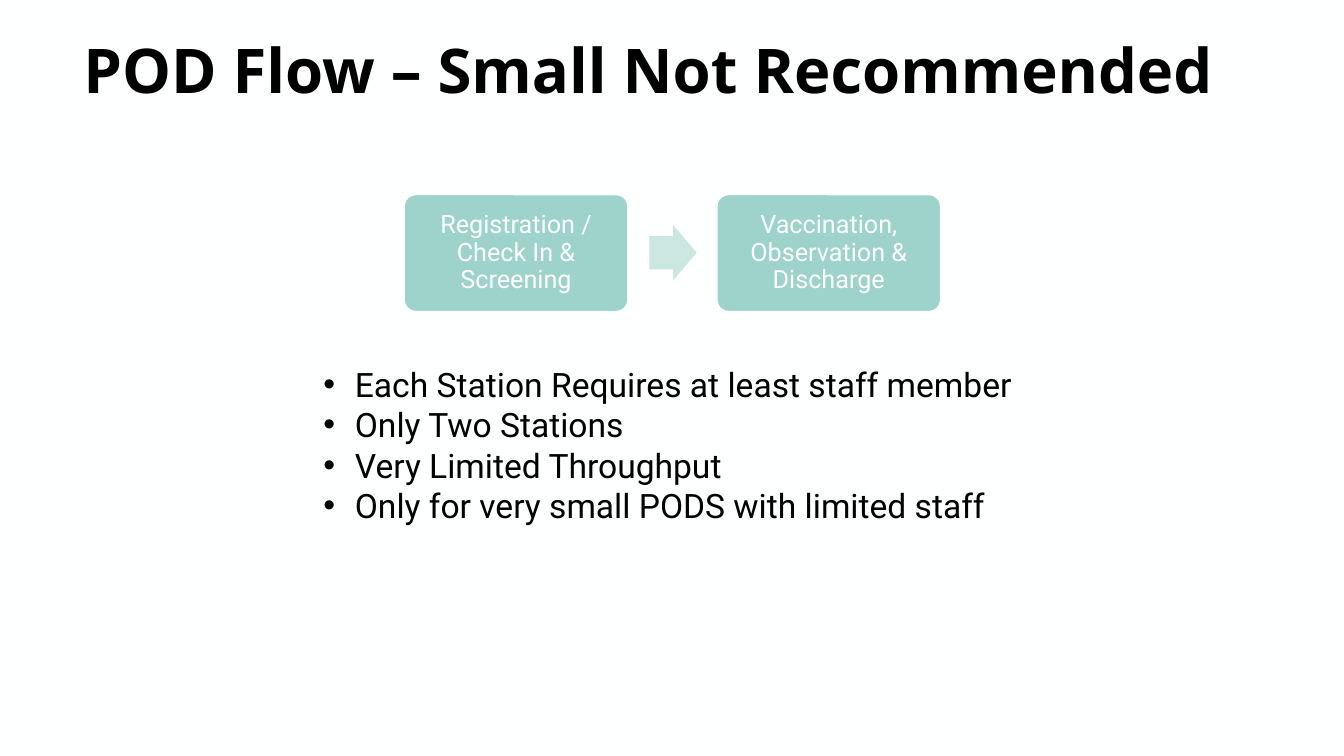
from lxml import etree
from pptx import Presentation
from pptx.dml.color import RGBColor
from pptx.enum.shapes import MSO_SHAPE
from pptx.enum.text import MSO_ANCHOR, PP_ALIGN
from pptx.oxml.ns import qn
from pptx.util import Pt

ROUNDED, ARROW = MSO_SHAPE.ROUNDED_RECTANGLE, MSO_SHAPE.RIGHT_ARROW
MIDDLE, TOP = MSO_ANCHOR.MIDDLE, MSO_ANCHOR.TOP
CENTER, LEFT = PP_ALIGN.CENTER, PP_ALIGN.LEFT
WHITE, BLACK, TEAL, PALE_TEAL = "FEFFFF", "000000", "9DD3CA", "CCE6E1"

TITLE = {"name": "Open Sans", "size": Pt(44), "bold": True}
STATION = {"name": "Roboto", "size": Pt(18)}
BULLET = {"name": "Roboto", "size": Pt(24)}


def color(hex_value):
    return RGBColor.from_string(hex_value)


def write(paragraph, text, font_format, text_color, **paragraph_format):
    paragraph.text = text
    for name, value in paragraph_format.items():
        setattr(paragraph, name, value)
    for name, value in font_format.items():
        setattr(paragraph.font, name, value)
    paragraph.font.color.rgb = color(text_color)


presentation = Presentation()
presentation.slide_width, presentation.slide_height = Pt(960), Pt(540)
slide = presentation.slides.add_slide(presentation.slide_layouts[6])
slide.background.fill.solid()
slide.background.fill.fore_color.rgb = color(WHITE)

# Title
title = slide.shapes.add_textbox(Pt(52.5), Pt(0), Pt(855), Pt(104.4)).text_frame
title.word_wrap = True
title.vertical_anchor = MIDDLE
write(title.paragraphs[0], "POD Flow – Small Not Recommended", TITLE, BLACK,
      alignment=LEFT, line_spacing=0.9)

# Stations
stations = ["Registration / Check In & Screening",
            "Vaccination, Observation & Discharge"]
for index, label in enumerate(stations):
    station = slide.shapes.add_shape(
        ROUNDED, Pt(288.7 + index * 223.4), Pt(139), Pt(159.8), Pt(83.5))
    station.shadow.inherit = False
    station.adjustments[0] = 0.1
    station.fill.solid()
    station.fill.fore_color.rgb = color(TEAL)
    station.line.color.rgb = color(WHITE)
    station.line.width = Pt(1)
    frame = station.text_frame
    frame.word_wrap = True
    frame.vertical_anchor = MIDDLE
    for side in ("left", "top", "right", "bottom"):
        setattr(frame, f"margin_{side}", Pt(5))
    write(frame.paragraphs[0], label, STATION, WHITE,
          alignment=CENTER, line_spacing=0.9)

# Arrow between the stations
arrow = slide.shapes.add_shape(ARROW, Pt(463.8), Pt(160.7), Pt(33.9), Pt(39.6))
arrow.shadow.inherit = False
arrow.adjustments[0], arrow.adjustments[1] = 0.6, 0.5
arrow.fill.solid()
arrow.fill.fore_color.rgb = color(PALE_TEAL)
arrow.line.fill.background()

# Bulleted remarks
remarks = ["Each Station Requires at least staff member",
           "Only Two Stations",
           "Very Limited Throughput",
           "Only for very small PODS with limited staff"]
frame = slide.shapes.add_textbox(Pt(223.9), Pt(256.3), Pt(512.6), Pt(123.8)).text_frame
frame.word_wrap = True
frame.vertical_anchor = TOP
for index, remark in enumerate(remarks):
    paragraph = frame.add_paragraph() if index else frame.paragraphs[0]
    properties = paragraph._p.get_or_add_pPr()
    properties.set("marL", str(Pt(22.5)))
    properties.set("indent", str(-Pt(22.5)))
    etree.SubElement(properties, qn("a:buFont"), typeface="Arial")
    etree.SubElement(properties, qn("a:buChar"), char="•")
    write(paragraph, remark, BULLET, BLACK, alignment=LEFT)

presentation.save("out.pptx")
